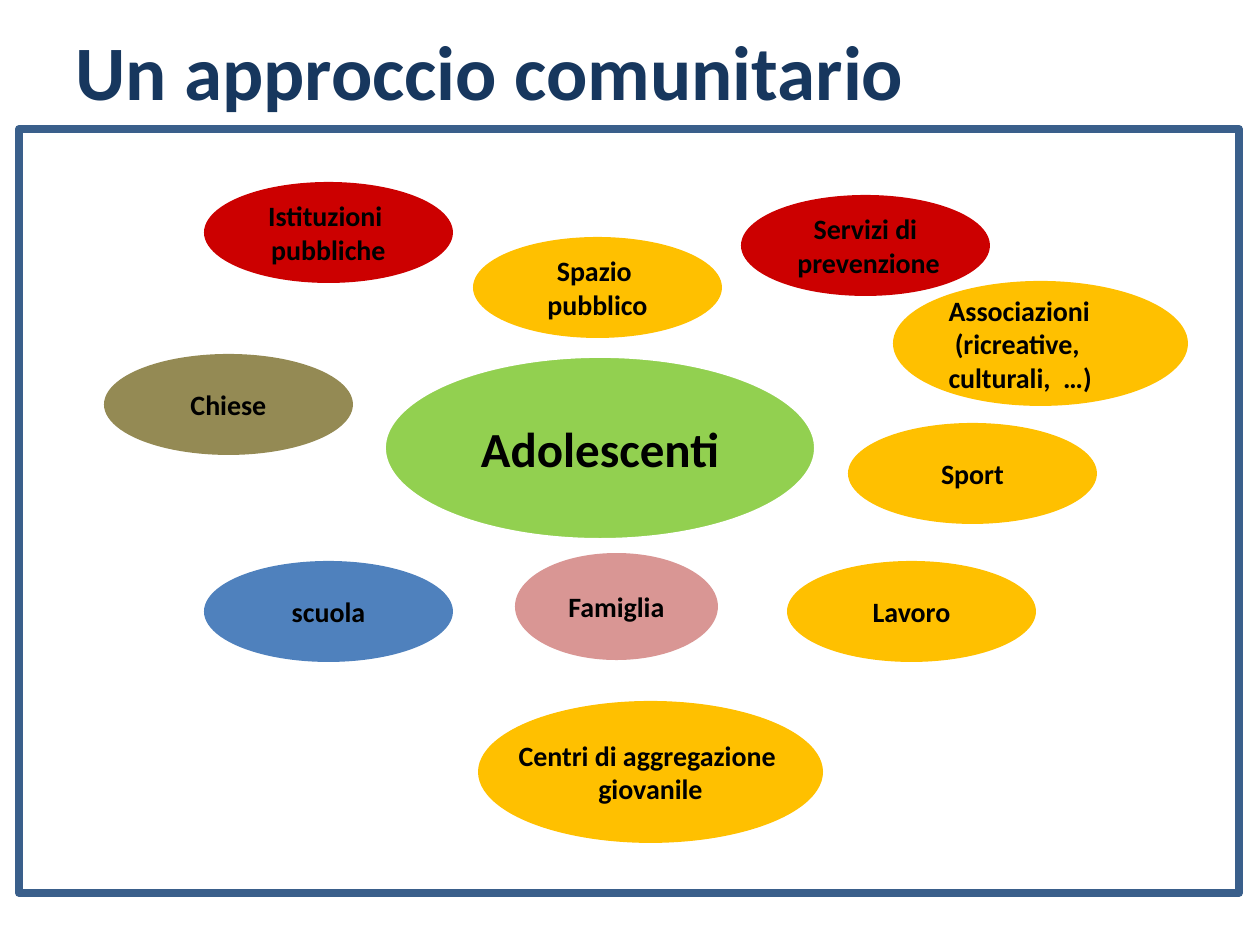
from pptx import Presentation
from pptx.dml.color import RGBColor
from pptx.enum.shapes import MSO_SHAPE as Shape
from pptx.enum.text import MSO_ANCHOR as Anchor, PP_ALIGN as Align
from pptx.util import Pt

PX = 914400 // 126
NAVY = RGBColor(0x17, 0x37, 0x5E)
STEEL = RGBColor(0x3A, 0x5F, 0x8B)
GREEN = RGBColor(0x92, 0xD0, 0x50)
OLIVE = RGBColor(0x94, 0x8A, 0x54)
BLUE = RGBColor(0x4F, 0x81, 0xBD)
AMBER = RGBColor(0xFF, 0xC0, 0x00)
ROSE = RGBColor(0xD9, 0x96, 0x94)
RED = RGBColor(0xCC, 0x00, 0x00)
BLACK = RGBColor(0, 0, 0)
WHITE = RGBColor(255, 255, 255)

TITLE = "Un approccio comunitario"
TITLE_BOX = (63, 16, 1134, 107)
FRAME_BOX = (19, 129, 1220, 764)
CENTRE = ("Adolescenti", (382, 354, 436, 188), GREEN)
STANDARD = (249, 101)
ACTORS = [
    ("Chiese", (104, 354, *STANDARD), OLIVE, Align.CENTER),
    ("scuola", (204, 561, *STANDARD), BLUE, Align.CENTER),
    ("Sport", (848, 423, *STANDARD), AMBER, Align.CENTER),
    ("Famiglia", (515, 553, 203, 107), ROSE, Align.CENTER),
    ("Istituzioni \npubbliche", (204, 182, *STANDARD), RED, Align.CENTER),
    ("Servizi di\n prevenzione", (741, 195, *STANDARD), RED, Align.CENTER),
    ("Spazio \npubblico", (473, 237, *STANDARD), AMBER, Align.CENTER),
    ("Associazioni\n (ricreative,\nculturali,  …)", (893, 281, 295, 125), AMBER, Align.LEFT),
    ("Lavoro", (787, 561, *STANDARD), AMBER, Align.CENTER),
    ("Centri di aggregazione \ngiovanile", (478, 701, 345, 142), AMBER, Align.CENTER),
]


def emu(box):
    return [value * PX for value in box]


def write(holder, text, size, color, align, wrap):
    frame = holder.text_frame
    frame.text = text
    frame.word_wrap = wrap
    frame.vertical_anchor = Anchor.MIDDLE
    for paragraph in frame.paragraphs:
        paragraph.alignment = align
        for run in paragraph.runs:
            run.font.name = "Calibri"
            run.font.size = Pt(size)
            run.font.bold = True
            run.font.color.rgb = color


def add_oval(slide, text, box, fill, align=Align.CENTER, size=16):
    oval = slide.shapes.add_shape(Shape.OVAL, *emu(box))
    oval.shadow.inherit = False
    oval.fill.solid()
    oval.fill.fore_color.rgb = fill
    oval.line.fill.background()
    write(oval, text, size, BLACK, align, False)
    return oval


def main():
    deck = Presentation()
    deck.slide_width, deck.slide_height = emu((1260, 945))
    slide = deck.slides.add_slide(deck.slide_layouts[6])

    title = slide.shapes.add_textbox(*emu(TITLE_BOX))
    write(title, TITLE, 44, NAVY, Align.LEFT, True)

    centre = add_oval(slide, *CENTRE, size=28)
    centre.line.color.rgb = WHITE
    centre.line.width = Pt(4.5)
    for actor in ACTORS:
        add_oval(slide, *actor)

    border = slide.shapes.add_shape(Shape.RECTANGLE, *emu(FRAME_BOX))
    border.shadow.inherit = False
    border.fill.background()
    border.line.color.rgb = STEEL
    border.line.width = Pt(4.5)

    deck.save("out.pptx")


if __name__ == "__main__":
    main()
